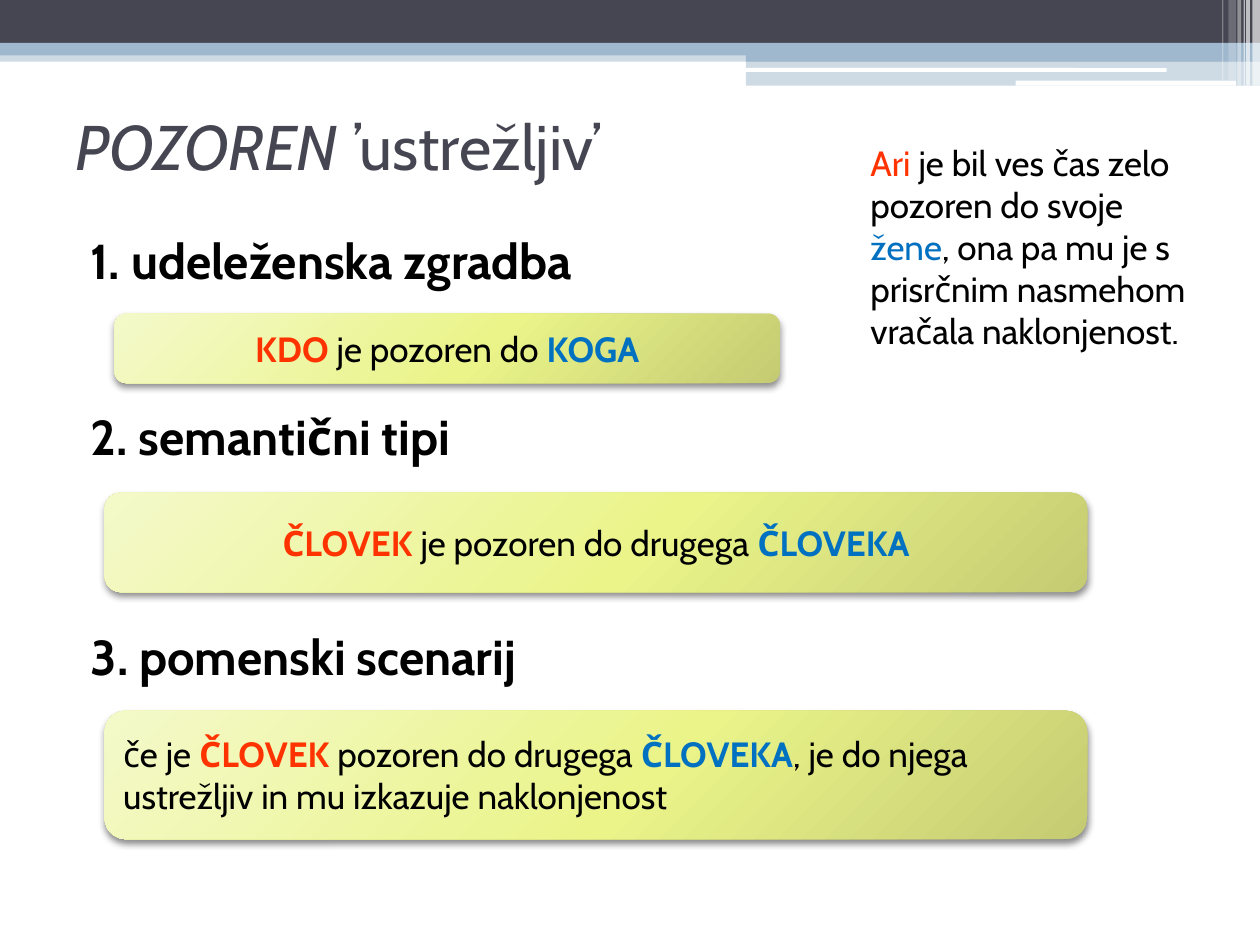
import dataclasses

import pptx
import pptx.dml.color
import pptx.enum.shapes
import pptx.enum.text
import pptx.oxml
import pptx.oxml.ns
import pptx.util

Inches = pptx.util.Inches
Pt = pptx.util.Pt
SHAPES = pptx.enum.shapes.MSO_SHAPE
ALIGN = pptx.enum.text.PP_ALIGN
ANCHOR = pptx.enum.text.MSO_ANCHOR
AUTOFIT = pptx.enum.text.MSO_AUTO_SIZE
DRAWING_NS = pptx.oxml.ns.nsdecls("a")


@dataclasses.dataclass(frozen=True)
class Theme:
    font: str = "Cabin"
    dark: str = "464653"
    band: str = "9FB8CD"
    paper: str = "FFFFFF"
    ink: str = "000000"
    subject: str = "FF3300"
    partner: str = "0070C0"
    gradient: tuple = ((0, "F4F9CA"), (55, "EAF489"), (100, "C4CB72"))
    title_size: int = 36
    heading_size: int = 28
    text_size: int = 20


THEME = Theme()
PLAIN = {"color": THEME.ink}
SUBJECT = {"color": THEME.subject}
PARTNER = {"color": THEME.partner}
STRONG_SUBJECT = SUBJECT | {"bold": True}
STRONG_PARTNER = PARTNER | {"bold": True}


def apply(target, values):
    for name, value in values.items():
        setattr(target, name, value)


def place(part, box):
    names = ("left", "top", "width", "height")
    apply(part, dict(zip(names, map(Inches, box))))


def write(paragraph, pieces, size, **paragraph_format):
    """Fill a paragraph with (text, font format) pieces."""
    apply(paragraph, paragraph_format)
    for text, values in pieces:
        run = paragraph.add_run()
        run.text = text
        font = {"name": THEME.font, "size": Pt(size), "bold": False} | values
        run.font.color.rgb = pptx.dml.color.RGBColor.from_string(font.pop("color"))
        apply(run.font, font)


def add_bar(slide, box, color, opacity=100, kind=SHAPES.RECTANGLE):
    bar = slide.shapes.add_shape(kind, *map(Inches, box))
    bar.shadow.inherit = False
    bar.line.fill.background()
    bar.fill.solid()
    bar.fill.fore_color.rgb = pptx.dml.color.RGBColor.from_string(color)
    if opacity < 100:
        rgb = bar._element.spPr.find(".//" + pptx.oxml.ns.qn("a:srgbClr"))
        rgb.append(pptx.oxml.parse_xml(
            f'<a:alpha {DRAWING_NS} val="{opacity * 1000}"/>'))


def add_header(slide, box):
    left, top, width, height = box
    right = left + width
    wing = left + 5.92
    add_bar(slide, (left, top + 0.4, width, 0.09), THEME.band, 50)
    add_bar(slide, (left, top, width, 0.34), THEME.dark)
    add_bar(slide, (left, top + 0.34, width, 0.1), THEME.band)
    add_bar(slide, (wing, top + 0.39, right - wing, 0.1), THEME.band)
    add_bar(slide, (wing, top + 0.48, right - wing, 0.2), THEME.band, 50)
    for x, y, length, thickness in ((5.91, 0.54, 3.35, 0.03), (8.06, 0.64, 1.75, 0.04)):
        add_bar(slide, (left + x, top + y, length, thickness), THEME.paper,
                kind=SHAPES.ROUNDED_RECTANGLE)
    stripes = ((0.06, 0.06, 0, 65), (0.11, 0.03, 0, 65), (0.13, 0.01, 0, 60),
               (0.18, 0.03, 0, 40), (0.25, 0.06, 0.04, 20), (0.3, 0.01, 0.04, 30))
    for offset, thickness, gap, opacity in stripes:
        add_bar(slide, (right - offset, top, thickness, height - gap),
                THEME.paper, opacity)


def add_title(slide, box):
    title = slide.shapes.title
    place(title, box)
    apply(title.text_frame, {"vertical_anchor": ANCHOR.MIDDLE, "word_wrap": True,
                             "auto_size": AUTOFIT.NONE})
    color = {"color": THEME.dark}
    write(title.text_frame.paragraphs[0],
          [("POZOREN ", color | {"italic": True}), ("’ustrežljiv’", color)],
          THEME.title_size, alignment=ALIGN.LEFT)


def add_headings(slide, box, headings):
    """Fill the body with (text, points of space before) headings."""
    body = slide.placeholders[1]
    place(body, box)
    apply(body.text_frame, {"vertical_anchor": ANCHOR.TOP, "word_wrap": True,
                            "auto_size": AUTOFIT.NONE})
    for index, (text, gap) in enumerate(headings):
        paragraph = (body.text_frame.add_paragraph() if index
                     else body.text_frame.paragraphs[0])
        write(paragraph, [(text, PLAIN | {"bold": True})], THEME.heading_size,
              space_before=Pt(gap))
        properties = paragraph._p.get_or_add_pPr()
        properties.set("marL", str(Inches(0.4)))
        properties.set("indent", str(Inches(-0.28)))
        properties.append(pptx.oxml.parse_xml(f"<a:buNone {DRAWING_NS}/>"))


def add_card(slide, box, pieces, alignment=ALIGN.CENTER):
    card = slide.shapes.add_shape(SHAPES.ROUNDED_RECTANGLE, *map(Inches, box))
    stops = "".join(f'<a:gs pos="{position * 1000}"><a:srgbClr val="{color}"/></a:gs>'
                    for position, color in THEME.gradient)
    properties = card._element.spPr
    properties.append(pptx.oxml.parse_xml(
        f'<a:gradFill {DRAWING_NS} rotWithShape="1"><a:gsLst>{stops}</a:gsLst>'
        '<a:path path="circle"><a:fillToRect l="-40000" t="-90000" r="140000" '
        'b="190000"/></a:path></a:gradFill>'))
    card.line.fill.background()
    properties.append(pptx.oxml.parse_xml(
        f'<a:effectLst {DRAWING_NS}><a:outerShdw blurRad="{Pt(4)}" dist="{Pt(2)}" '
        'dir="5400000" rotWithShape="0">'
        f'<a:srgbClr val="{THEME.ink}"><a:alpha val="45000"/></a:srgbClr>'
        '</a:outerShdw></a:effectLst>'))
    apply(card.text_frame, {"vertical_anchor": ANCHOR.MIDDLE, "word_wrap": True})
    write(card.text_frame.paragraphs[0], pieces, THEME.text_size, alignment=alignment)


def add_example(slide, box, pieces):
    example = slide.shapes.add_textbox(*map(Inches, box))
    apply(example.text_frame, {"word_wrap": True,
                               "auto_size": AUTOFIT.SHAPE_TO_FIT_TEXT})
    write(example.text_frame.paragraphs[0], pieces, THEME.text_size)


def main():
    deck = pptx.Presentation()
    apply(deck, {"slide_width": Inches(10), "slide_height": Inches(7.5)})
    slide = deck.slides.add_slide(deck.slide_layouts[1])

    add_header(slide, (0, 0, 10, 0.68))
    add_title(slide, (0.5, 0.68, 9, 0.94))
    add_headings(slide, (0.5, 1.78, 9, 5.41), [
        ("1. udeleženska zgradba", 3),
        ("2. semantični tipi", 67),
        ("3. pomenski scenarij", 92),
    ])
    add_card(slide, (0.91, 2.49, 5.28, 0.55), [
        ("KDO ", STRONG_SUBJECT), ("je pozoren do ", PLAIN), ("KOGA", STRONG_PARTNER)])
    add_card(slide, (0.83, 3.91, 7.8, 0.79), [
        ("ČLOVEK ", STRONG_SUBJECT), ("je pozoren do drugega ", PLAIN),
        ("ČLOVEKA", STRONG_PARTNER)])
    add_card(slide, (0.83, 5.64, 7.8, 1.02), [
        ("če je ", PLAIN), ("ČLOVEK", STRONG_SUBJECT),
        (" pozoren do drugega ", PLAIN), ("ČLOVEKA", STRONG_PARTNER),
        (", je do njega ustrežljiv in mu izkazuje naklonjenost", PLAIN)], ALIGN.LEFT)
    add_example(slide, (6.81, 1.07, 2.76, 2.12), [
        ("Ari", SUBJECT), (" je bil ves čas zelo pozoren do svoje ", PLAIN),
        ("žene", PARTNER),
        (", ona pa mu je s prisrčnim nasmehom vračala naklonjenost.", PLAIN)])

    deck.save("out.pptx")


if __name__ == "__main__":
    main()
